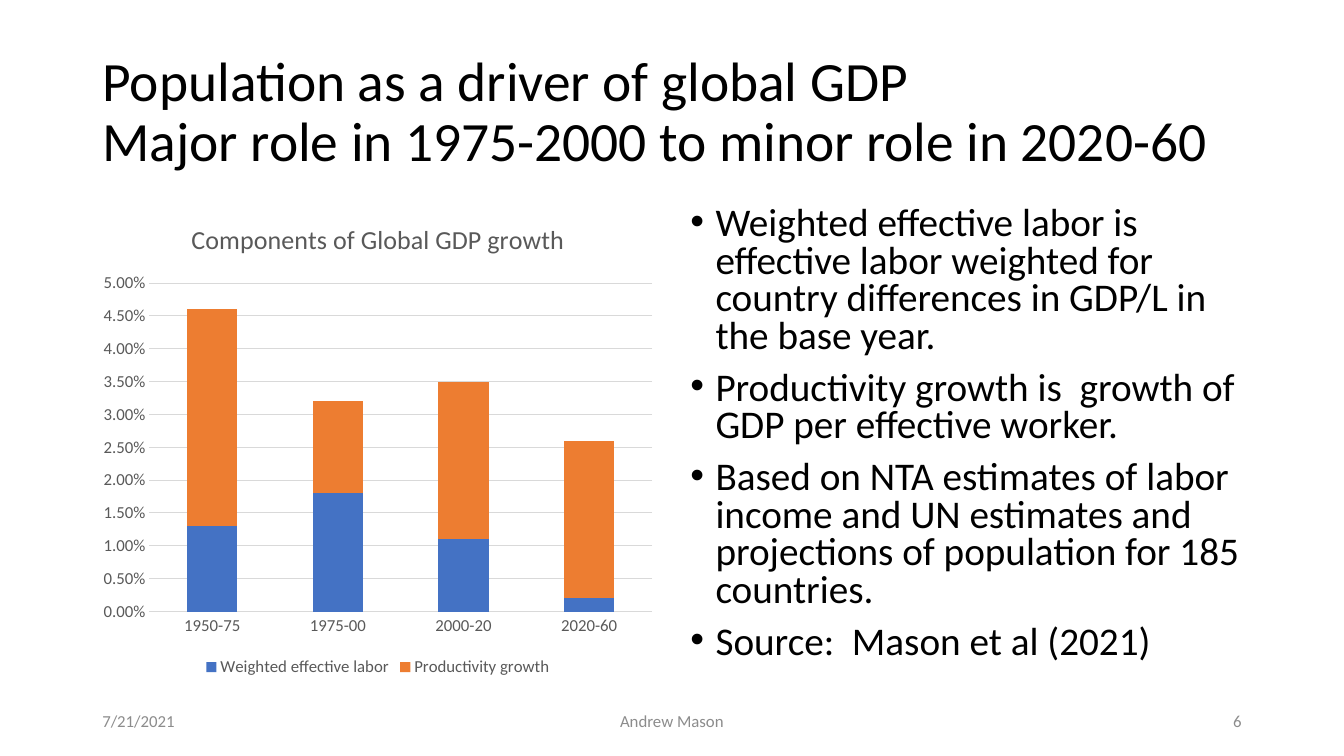
from dataclasses import dataclass

from lxml.etree import SubElement
from pptx import Presentation
from pptx.chart.data import CategoryChartData
from pptx.dml.color import RGBColor
from pptx.enum.chart import XL_CHART_TYPE, XL_LEGEND_POSITION, XL_TICK_MARK
from pptx.enum.text import MSO_ANCHOR, MSO_AUTO_SIZE, PP_ALIGN
from pptx.oxml import parse_xml
from pptx.oxml.ns import nsdecls, qn
from pptx.util import Pt

FONT = "Calibri"
BLACK = RGBColor(0x00, 0x00, 0x00)
FOOTER_GRAY = RGBColor(0x8C, 0x8C, 0x8C)
CHART_TEXT = RGBColor(0x59, 0x59, 0x59)
GRID_GRAY = RGBColor(0xD9, 0xD9, 0xD9)
BLUE = RGBColor(0x44, 0x72, 0xC4)
ORANGE = RGBColor(0xED, 0x7D, 0x31)

MARGIN = 66
CONTENT_TOP = 144
COLUMN_WIDTH = 408
CONTENT_HEIGHT = 342.6
BULLET_INDENT = 18


@dataclass(frozen=True)
class GrowthComponent:
    name: str
    values: tuple[float, ...]
    color: RGBColor


@dataclass(frozen=True)
class FooterItem:
    text: str
    left: float
    width: float
    alignment: PP_ALIGN


PERIODS = ("1950-75", "1975-00", "2000-20", "2020-60")
COMPONENTS = (
    GrowthComponent("Weighted effective labor", (0.013, 0.018, 0.011, 0.002), BLUE),
    GrowthComponent("Productivity growth", (0.033, 0.014, 0.024, 0.024), ORANGE),
)
BULLETS = (
    "Weighted effective labor is effective labor weighted for country differences "
    "in GDP/L in the base year.",
    "Productivity growth is  growth of GDP per effective worker.",
    "Based on NTA estimates of labor income and UN estimates and projections of "
    "population for 185 countries.",
    "Source:  Mason et al (2021)",
)
FOOTER = (
    FooterItem("7/21/2021", MARGIN, 216, PP_ALIGN.LEFT),
    FooterItem("Andrew Mason", 318, 324, PP_ALIGN.CENTER),
    FooterItem("6", 678, 216, PP_ALIGN.RIGHT),
)


def place(shape, left: float, top: float, width: float, height: float) -> None:
    shape.left, shape.top = Pt(left), Pt(top)
    shape.width, shape.height = Pt(width), Pt(height)


def format_font(font, size: float, color: RGBColor) -> None:
    font.name = FONT
    font.size = Pt(size)
    font.bold = False
    font.color.rgb = color


def add_bullet(paragraph) -> None:
    properties = paragraph._p.get_or_add_pPr()
    properties.set("marL", str(Pt(BULLET_INDENT)))
    properties.set("indent", str(-Pt(BULLET_INDENT)))
    SubElement(properties, qn("a:buFont"), typeface="Arial")
    SubElement(properties, qn("a:buChar"), char="•")


def write_text(shape, *texts: str, size: float, color: RGBColor = BLACK,
               alignment: PP_ALIGN = PP_ALIGN.LEFT,
               anchor: MSO_ANCHOR = MSO_ANCHOR.MIDDLE, line_spacing: float = 1.0,
               space_before: float = 0, bulleted: bool = False) -> None:
    """Write one paragraph per text."""
    frame = shape.text_frame
    frame.word_wrap = True
    frame.auto_size = MSO_AUTO_SIZE.NONE
    frame.vertical_anchor = anchor
    for index, text in enumerate(texts):
        paragraph = frame.add_paragraph() if index else frame.paragraphs[0]
        paragraph.text = text
        paragraph.alignment = alignment
        paragraph.line_spacing = line_spacing
        paragraph.space_before = Pt(space_before)
        for run in paragraph.runs:
            format_font(run.font, size, color)
        if bulleted:
            add_bullet(paragraph)


def set_layout(element, target: str = "", **fractions: float) -> None:
    """Position a chart part by fractions of the chart's size."""
    for old_layout in element.findall(qn("c:layout")):
        element.remove(old_layout)
    layout = parse_xml(f"<c:layout {nsdecls('c')}><c:manualLayout/></c:layout>")
    manual = layout[0]
    if target:
        SubElement(manual, qn("c:layoutTarget"), val=target)
    for key in ("x", "y"):
        SubElement(manual, qn(f"c:{key}Mode"), val="edge")
    for key, fraction in fractions.items():
        SubElement(manual, qn(f"c:{key}"), val=str(fraction))
    text = element.find(qn("c:tx"))
    element.insert(0 if text is None else 1, layout)


def add_growth_chart(slide) -> None:
    chart_data = CategoryChartData(number_format="0.00%")
    chart_data.categories = PERIODS
    for component in COMPONENTS:
        chart_data.add_series(component.name, component.values)
    chart = slide.shapes.add_chart(
        XL_CHART_TYPE.COLUMN_STACKED, Pt(MARGIN), Pt(CONTENT_TOP),
        Pt(COLUMN_WIDTH), Pt(CONTENT_HEIGHT), chart_data).chart
    format_font(chart.font, 12, CHART_TEXT)

    chart.has_title = True
    title = chart.chart_title
    title.text_frame.text = "Components of Global GDP growth"
    format_font(title.text_frame.paragraphs[0].runs[0].font, 18.6, CHART_TEXT)
    title.include_in_layout = False
    set_layout(title._element, x=0.165, y=0.03)

    plot = chart.plots[0]
    plot.gap_width = 150
    plot.overlap = 100
    plot.vary_by_categories = False
    for series, component in zip(plot.series, COMPONENTS):
        series.format.fill.solid()
        series.format.fill.fore_color.rgb = component.color
    set_layout(chart._chartSpace.chart.plotArea, "inner", x=0.1, y=0.17, w=0.88, h=0.685)

    value_axis, category_axis = chart.value_axis, chart.category_axis
    value_axis.minimum_scale = 0
    value_axis.maximum_scale = 0.05
    value_axis.major_unit = 0.005
    value_axis.tick_labels.number_format = "0.00%"
    value_axis.tick_labels.number_format_is_linked = False
    value_axis.format.line.fill.background()
    for axis in (value_axis, category_axis):
        axis.major_tick_mark = XL_TICK_MARK.NONE
        format_font(axis.tick_labels.font, 12, CHART_TEXT)
    for line in (value_axis.major_gridlines.format.line, category_axis.format.line):
        line.color.rgb = GRID_GRAY
        line.width = Pt(0.75)

    chart.has_legend = True
    chart.legend.position = XL_LEGEND_POSITION.BOTTOM
    chart.legend.include_in_layout = False
    format_font(chart.legend.font, 12, CHART_TEXT)


def add_text_box(slide, left: float, top: float, width: float, height: float):
    return slide.shapes.add_textbox(Pt(left), Pt(top), Pt(width), Pt(height))


def main() -> None:
    presentation = Presentation()
    presentation.slide_width, presentation.slide_height = Pt(960), Pt(540)
    slide = presentation.slides.add_slide(presentation.slide_layouts.get_by_name("Title Only"))

    title = slide.shapes.title
    place(title, MARGIN, 28.8, 828, 104.4)
    write_text(title, "Population as a driver of global GDP\v"
               "Major role in 1975-2000 to minor role in 2020-60",
               size=39.6, line_spacing=0.9)

    add_growth_chart(slide)

    body = add_text_box(slide, 486, CONTENT_TOP, COLUMN_WIDTH, CONTENT_HEIGHT)
    write_text(body, *BULLETS, size=28, anchor=MSO_ANCHOR.TOP,
               line_spacing=0.8, space_before=10, bulleted=True)

    for item in FOOTER:
        box = add_text_box(slide, item.left, 500.5, item.width, 28.75)
        write_text(box, item.text, size=12, color=FOOTER_GRAY, alignment=item.alignment)

    presentation.save("out.pptx")


if __name__ == "__main__":
    main()
